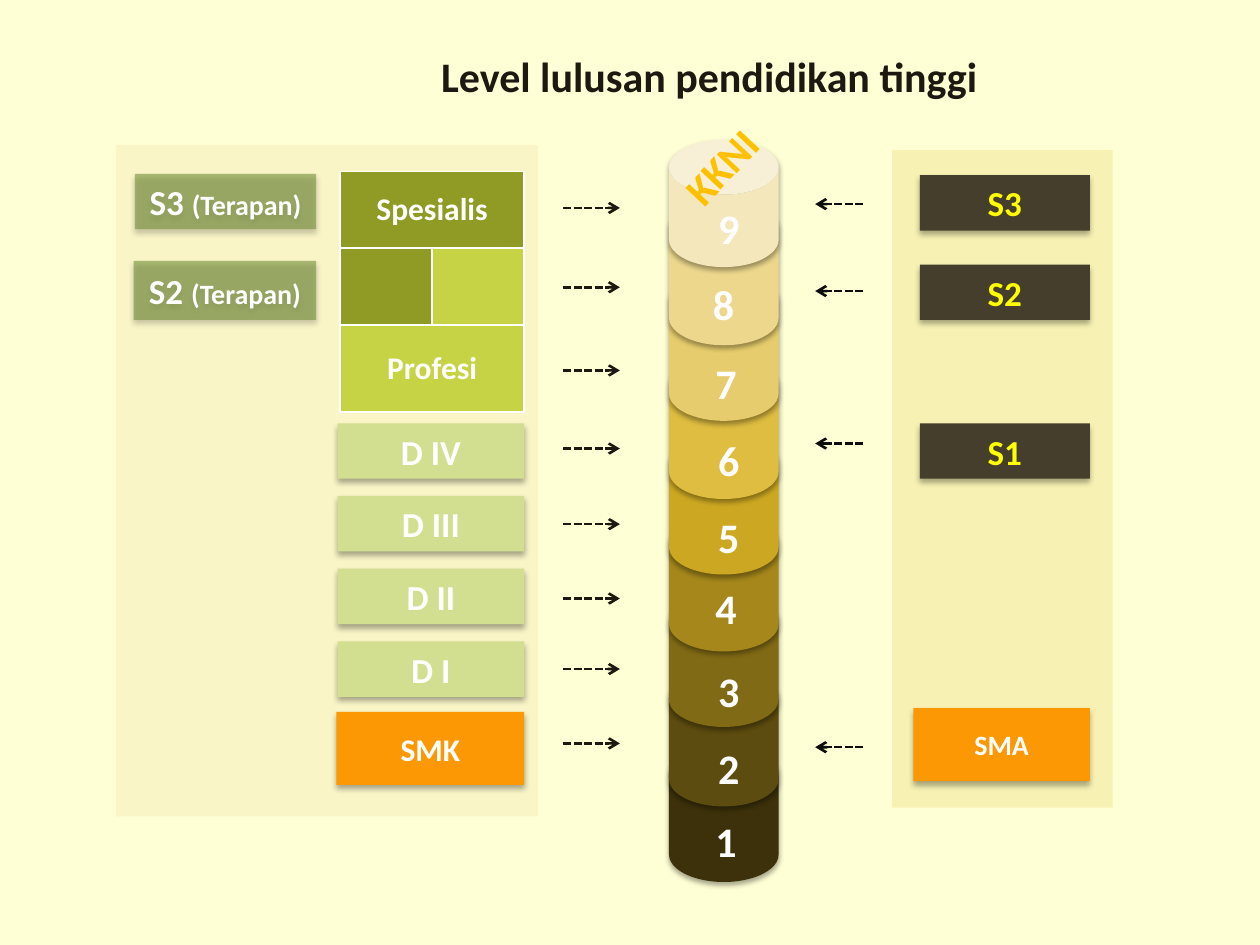
from lxml import etree
from pptx import Presentation
from pptx.dml.color import RGBColor
from pptx.enum import dml, shapes, text
from pptx.oxml import parse_xml
from pptx.oxml.ns import nsdecls, qn
from pptx.util import Inches, Pt


class Theme:
    font = "Calibri"
    background = "FFFFD6"
    title = "1C1911"
    white = "FFFFFF"
    yellow = "FFFF00"
    gold = "FFC000"
    left_panel, right_panel = "F9F5C7", "F7F2B3"
    academic, diploma, applied, school = "463E2C", "D2DF91", "77933C", "FC9804"
    specialist, profession = "909B25", "C5D345"
    left_arrow, right_arrow = "1C1911", "0D0D0D"
    levels = ["3C310A", "5D4C0F", "816A15", "A5871B", "CCA822",
              "DFBD41", "E6CC6C", "ECD78C", "F3E7BB"]
    big, label, medium, small = 24, 20, 18, 16
    box_shadow = (32, 3.5, 2.2)  # opacity %, blur pt, distance pt
    can_shadow = (35, 3.1, 1.8)


def add_block(kind, x, y, w, h, fill, shadow=None):
    sp = slide.shapes.add_shape(kind, Inches(x), Inches(y), Inches(w), Inches(h))
    sp.shadow.inherit = False
    sp.fill.solid()
    sp.fill.fore_color.rgb = RGBColor.from_string(fill)
    sp.line.fill.background()
    if shadow:
        opacity, blur, distance = shadow
        sp._element.spPr.find(qn("a:effectLst")).append(parse_xml(
            f'<a:outerShdw {nsdecls("a")} blurRad="{Pt(blur)}" dist="{Pt(distance)}" '
            f'dir="5400000" rotWithShape="0"><a:srgbClr val="000000">'
            f'<a:alpha val="{opacity * 1000}"/></a:srgbClr></a:outerShdw>'))
    return sp


def write(tf, words, size, color=Theme.white):
    """Fill a text frame with one bold, centred paragraph and return it."""
    tf.vertical_anchor = text.MSO_ANCHOR.MIDDLE
    p = tf.paragraphs[0]
    p.text = words
    p.alignment = text.PP_ALIGN.CENTER
    p.font.name, p.font.size, p.font.bold = Theme.font, Pt(size), True
    p.font.color.rgb = RGBColor.from_string(color)
    return p


RECT, CAN = shapes.MSO_SHAPE.RECTANGLE, shapes.MSO_SHAPE.CAN

prs = Presentation()
prs.slide_width, prs.slide_height = Inches(10), Inches(7.5)
slide = prs.slides.add_slide(prs.slide_layouts[5])
slide.background.fill.solid()
slide.background.fill.fore_color.rgb = RGBColor.from_string(Theme.background)

title = slide.shapes.title
title.left, title.top = Inches(2.8), Inches(0.35)
title.width, title.height = Inches(5.66), Inches(0.5)
write(title.text_frame, "Level lulusan pendidikan tinggi", Theme.big, Theme.title)

# Academic track on the right
add_block(RECT, 7.08, 1.19, 1.75, 5.22, Theme.right_panel)
for degree, y in [("S3", 1.39), ("S2", 2.1), ("S1", 3.36)]:
    sp = add_block(RECT, 7.3, y, 1.35, 0.44, Theme.academic, Theme.box_shadow)
    write(sp.text_frame, degree, Theme.label, Theme.yellow)

# Column of nine levels, stacked from the bottom up
cans = [(5.92, 1.08), (5.32, 1.08), (4.71, 1.06), (4.09, 1.08), (3.46, 1.1),
        (2.84, 1.12), (2.17, 1.17), (1.59, 1.15), (1.11, 1.01)]
for (y, h), color in zip(cans, Theme.levels):
    sp = add_block(CAN, 5.31, y, 0.87, h, color, Theme.can_shadow)
    sp.adjustments[0] = 0.5

numbers = [(5.58, 6.42), (5.6, 5.84), (5.6, 5.23), (5.58, 4.57), (5.6, 4.01),
           (5.6, 3.4), (5.58, 2.79), (5.56, 2.16), (5.6, 1.56)]
for level, (x, y) in enumerate(numbers, start=1):
    tb = slide.shapes.add_textbox(Inches(x), Inches(y), Inches(0.35), Inches(0.5))
    tb.text_frame.word_wrap = False
    write(tb.text_frame, str(level), Theme.big)

tb = slide.shapes.add_textbox(Inches(5.17), Inches(1.07), Inches(1.1), Inches(0.5))
tb.rotation = -47
tb.text_frame.word_wrap = True
write(tb.text_frame, "KKNI", Theme.big, Theme.gold)

# Vocational track on the left
add_block(RECT, 0.92, 1.15, 3.35, 5.33, Theme.left_panel)
for i, diploma in enumerate(["D IV", "D III", "D II", "D I"]):
    sp = add_block(RECT, 2.68, 3.36 + 0.577 * i, 1.48, 0.44,
                   Theme.diploma, Theme.box_shadow)
    write(sp.text_frame, diploma, Theme.label)

for degree, x, y, w, h in [("S2", 1.06, 2.07, 1.45, 0.47),
                           ("S3", 1.07, 1.38, 1.44, 0.44)]:
    sp = add_block(RECT, x, y, w, h, Theme.applied, Theme.box_shadow)
    fill_color = sp._element.spPr.find(qn("a:solidFill"))[0]
    etree.SubElement(fill_color, qn("a:alpha"), val="60000")
    p = write(sp.text_frame, degree + " ", Theme.label)
    r = p.add_run()
    r.text = "(Terapan)"
    r.font.size = Pt(Theme.small)

# Specialist and profession table
table = slide.shapes.add_table(3, 2, Inches(2.7), Inches(1.36),
                               Inches(1.46), Inches(1.91)).table
table.first_row = table.horz_banding = False
for row, h in zip(table.rows, [0.61, 0.61, 0.69]):
    row.height = Inches(h)
cell_fills = [[Theme.specialist] * 2,
              [Theme.specialist, Theme.profession],
              [Theme.profession] * 2]
for i, fills in enumerate(cell_fills):
    for j, fill in enumerate(fills):
        cell = table.cell(i, j)
        tcPr = cell._tc.get_or_add_tcPr()
        for side in "LRTB":
            tcPr.append(parse_xml(
                f'<a:ln{side} {nsdecls("a")} w="{Pt(1)}"><a:solidFill>'
                f'<a:srgbClr val="{Theme.white}"/></a:solidFill></a:ln{side}>'))
        cell.fill.solid()
        cell.fill.fore_color.rgb = RGBColor.from_string(fill)
for i, name in [(0, "Spesialis"), (2, "Profesi")]:
    cell = table.cell(i, 0)
    cell.merge(table.cell(i, 1))
    cell.vertical_anchor = text.MSO_ANCHOR.MIDDLE
    write(cell.text_frame, name, Theme.medium)

# Secondary schools
for school, x, y, w, size in [("SMK", 2.67, 5.65, 1.49, Theme.medium),
                              ("SMA", 7.25, 5.62, 1.4, Theme.small)]:
    sp = add_block(RECT, x, y, w, 0.58, Theme.school, Theme.box_shadow)
    write(sp.text_frame, school, size)

# Arrows from both tracks to the levels
arrows = [(4.47, 4.92, y, Theme.left_arrow)
          for y in (1.65, 2.28, 2.94, 3.56, 4.16, 4.75, 5.31, 5.9)]
arrows += [(6.85, 6.47, y, Theme.right_arrow) for y in (1.62, 2.31, 3.52, 5.93)]
for start, end, y, color in arrows:
    c = slide.shapes.add_connector(shapes.MSO_CONNECTOR.STRAIGHT,
                                   Inches(start), Inches(y), Inches(end), Inches(y))
    c.line.width = Pt(1.5)
    c.line.color.rgb = RGBColor.from_string(color)
    c.line.dash_style = dml.MSO_LINE.SQUARE_DOT
    etree.SubElement(c.line._get_or_add_ln(), qn("a:tailEnd"), type="arrow")
    etree.SubElement(c._element.spPr, qn("a:effectLst"))

prs.save("out.pptx")
